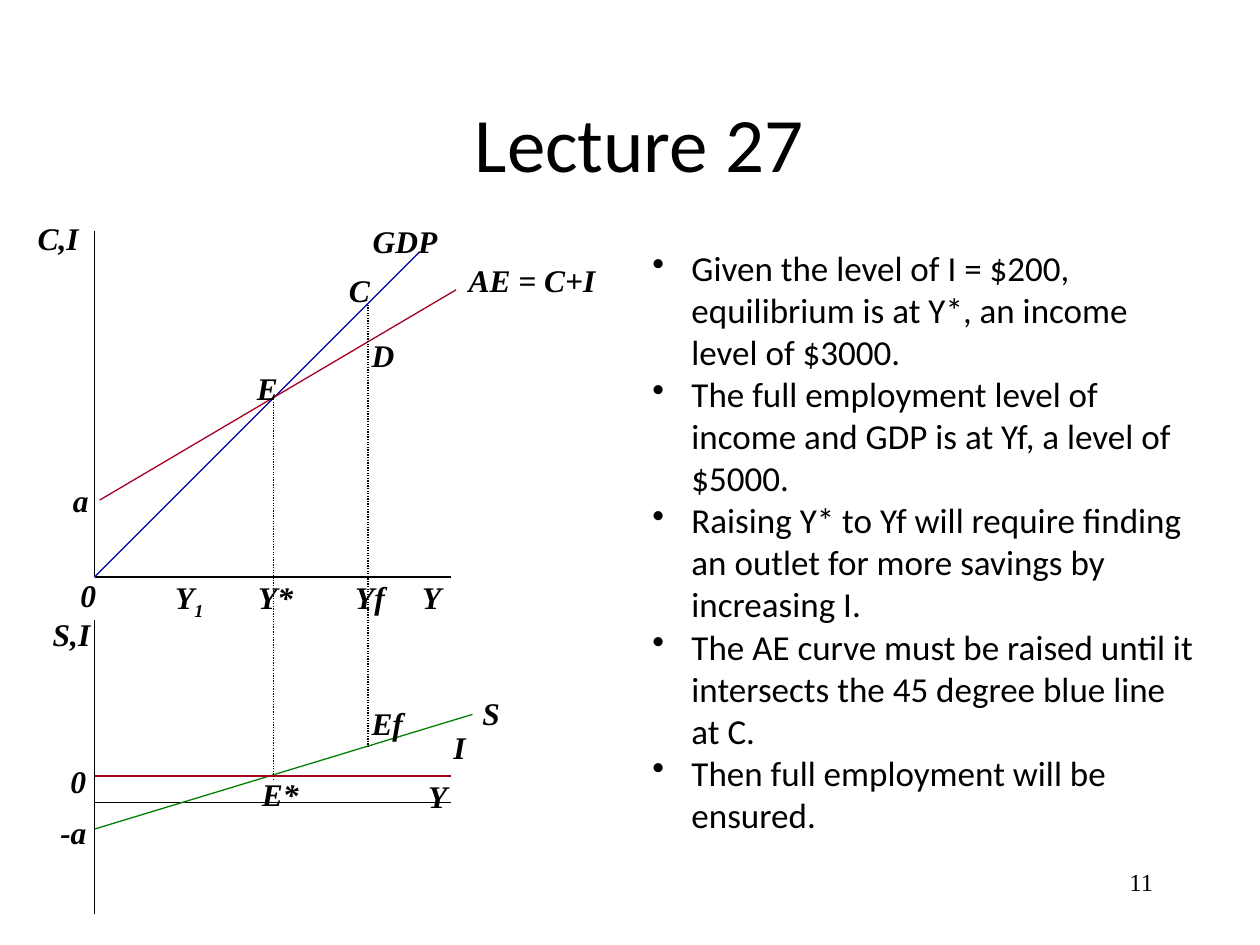
from lxml import etree
from pptx import Presentation
from pptx.dml.color import RGBColor
from pptx.enum.dml import MSO_LINE
from pptx.enum.shapes import MSO_CONNECTOR
from pptx.enum.text import MSO_ANCHOR, MSO_AUTO_SIZE, PP_ALIGN
from pptx.oxml.ns import qn
from pptx.util import Inches, Pt

STRAIGHT = MSO_CONNECTOR.STRAIGHT
DOTTED = MSO_LINE.ROUND_DOT
MIDDLE = MSO_ANCHOR.MIDDLE
CENTER, LEFT, RIGHT = PP_ALIGN.CENTER, PP_ALIGN.LEFT, PP_ALIGN.RIGHT
FIT_SHAPE = MSO_AUTO_SIZE.SHAPE_TO_FIT_TEXT
SERIF, SANS = "Times New Roman", "Calibri"
BLACK, BLUE, GREEN, RED = "000000", "000099", "008000", "A50021"

TITLE = "Lecture 27"
POINTS = [
    "Given the level of I = $200, equilibrium is at Y*, an income level of $3000.",
    "The full employment level of income and GDP is at Yf, a level of $5000.",
    "Raising Y* to Yf will require finding an outlet for more savings by increasing I.",
    "The AE curve must be raised until it intersects the 45 degree blue line at C.",
    "Then full employment will be ensured.",
]
PAGE_NUMBER = "11"

AXIS_X, AXIS_END = 0.75, 3.58
UPPER_ZERO, LOWER_ZERO, INVESTMENT = 4.58, 6.37, 6.16
EQUILIBRIUM_X, FULL_EMPLOYMENT_X = 2.17, 2.92
SOLID_LINES = [
    (AXIS_X, UPPER_ZERO, AXIS_END, UPPER_ZERO, BLACK),
    (AXIS_X, LOWER_ZERO, AXIS_END, LOWER_ZERO, BLACK),
    (AXIS_X, UPPER_ZERO, AXIS_X, 1.83, BLACK),
    (AXIS_X, 7.25, AXIS_X, 4.92, BLACK),
    (AXIS_X, UPPER_ZERO, 3.33, 2, BLUE),
    (AXIS_X, 6.58, 3.75, 5.67, GREEN),
    (0.79, 3.97, 3.62, 2.3, RED),
    (AXIS_X, INVESTMENT, AXIS_END, INVESTMENT, RED),
]
DOTTED_LINES = [
    (EQUILIBRIUM_X, 3.19, EQUILIBRIUM_X, 6.19, BLACK),
    (FULL_EMPLOYMENT_X, 2.42, FULL_EMPLOYMENT_X, 5.93, BLACK),
]
LABELS = [
    ("Y", 3.3, 6.12, 0.35),
    ("S", 3.73, 5.46, 0.34),
    ("GDP", 2.86, 1.71, 0.72),
    ("S,I", 0.32, 4.83, 0.5),
    ("0", 0.54, 4.52, 0.33),
    ("0", 0.46, 6, 0.33),
    ("-a", 0.38, 6.4, 0.41),
    ("a", 0.48, 3.77, 0.33),
    ("C,I", 0.2, 1.69, 0.53),
    ("E", 1.94, 2.88, 0.37),
    ("E*", 1.98, 6.1, 0.5),
    ("Ef", 2.85, 5.54, 0.45),
    ("C", 2.67, 2.1, 0.37),
    ("D", 2.85, 2.62, 0.38),
    ("AE = C+I", 3.62, 2.02, 1.22),
    ("I", 3.5, 5.73, 0.3),
]
INCOME_RUNS = [("Y", False), ("1", True), ("\tY*\tYf\tY", False)]
INCOME_TABS = [0.66, 1.43, 1.96]


def color(value):
    return RGBColor.from_string(value)


def format_paragraph(para, font, size, align=LEFT, emphasis=False):
    para.alignment = align
    para.font.name = font
    para.font.size = Pt(size)
    para.font.bold = para.font.italic = emphasis
    para.font.color.rgb = color(BLACK)


def add_box(page, left, top, width, height, wrap=True):
    box = page.shapes.add_textbox(Inches(left), Inches(top), Inches(width), Inches(height))
    box.text_frame.word_wrap = wrap
    return box.text_frame


def add_line(page, left, top, right, bottom, value, dash=None):
    line = page.shapes.add_connector(
        STRAIGHT, Inches(left), Inches(top), Inches(right), Inches(bottom))
    line.line.color.rgb = color(value)
    line.line.width = Pt(0.75)
    if dash:
        line.line.dash_style = dash
    etree.SubElement(line._element.spPr, qn("a:effectLst"))


def add_title(page):
    title = page.shapes.title
    title.left, title.top = Inches(0.75), Inches(0.5)
    title.width, title.height = Inches(8.5), Inches(1.25)
    frame = title.text_frame
    frame.text = TITLE
    frame.vertical_anchor = MIDDLE
    frame.margin_left = Inches(0.25)
    format_paragraph(frame.paragraphs[0], SANS, 44, CENTER)


def add_label(page, text, left, top, width):
    frame = add_box(page, left, top, width, 0.4, wrap=False)
    frame.auto_size = FIT_SHAPE
    frame.text = text
    format_paragraph(frame.paragraphs[0], SERIF, 18, emphasis=True)


def add_income_labels(page):
    frame = add_box(page, 1.23, 4.54, 2.44, 0.4)
    frame.margin_left = Inches(0.16)
    para = frame.paragraphs[0]
    format_paragraph(para, SERIF, 18, emphasis=True)
    tabs = etree.Element(qn("a:tabLst"))
    for position in INCOME_TABS:
        etree.SubElement(tabs, qn("a:tab"), pos=str(Inches(position)), algn="l")
    para._p.get_or_add_pPr().insert(0, tabs)
    for text, subscript in INCOME_RUNS:
        span = para.add_run()
        span.text = text
        if subscript:
            span._r.get_or_add_rPr().set("baseline", "-25000")


def add_points(page):
    frame = add_box(page, 5.08, 1.91, 4.5, 4.81)
    for index, text in enumerate(POINTS):
        para = frame.add_paragraph() if index else frame.paragraphs[0]
        para.text = text
        format_paragraph(para, SANS, 20)
        properties = para._p.get_or_add_pPr()
        properties.set("marL", str(Inches(0.31)))
        properties.set("indent", str(Inches(-0.31)))
        bullet = etree.Element(qn("a:buChar"), char="•")
        properties.insert(0, bullet)


def add_page_number(page):
    frame = add_box(page, 7.17, 6.83, 2.08, 0.5)
    frame.text = PAGE_NUMBER
    format_paragraph(frame.paragraphs[0], SERIF, 14, RIGHT)


def main():
    deck = Presentation()
    deck.slide_width, deck.slide_height = Inches(10), Inches(7.5)
    page = deck.slides.add_slide(deck.slide_layouts[5])
    add_title(page)
    for line in SOLID_LINES:
        add_line(page, *line)
    for line in DOTTED_LINES:
        add_line(page, *line, dash=DOTTED)
    add_income_labels(page)
    for label in LABELS:
        add_label(page, *label)
    add_points(page)
    add_page_number(page)
    deck.save("out.pptx")


if __name__ == "__main__":
    main()
